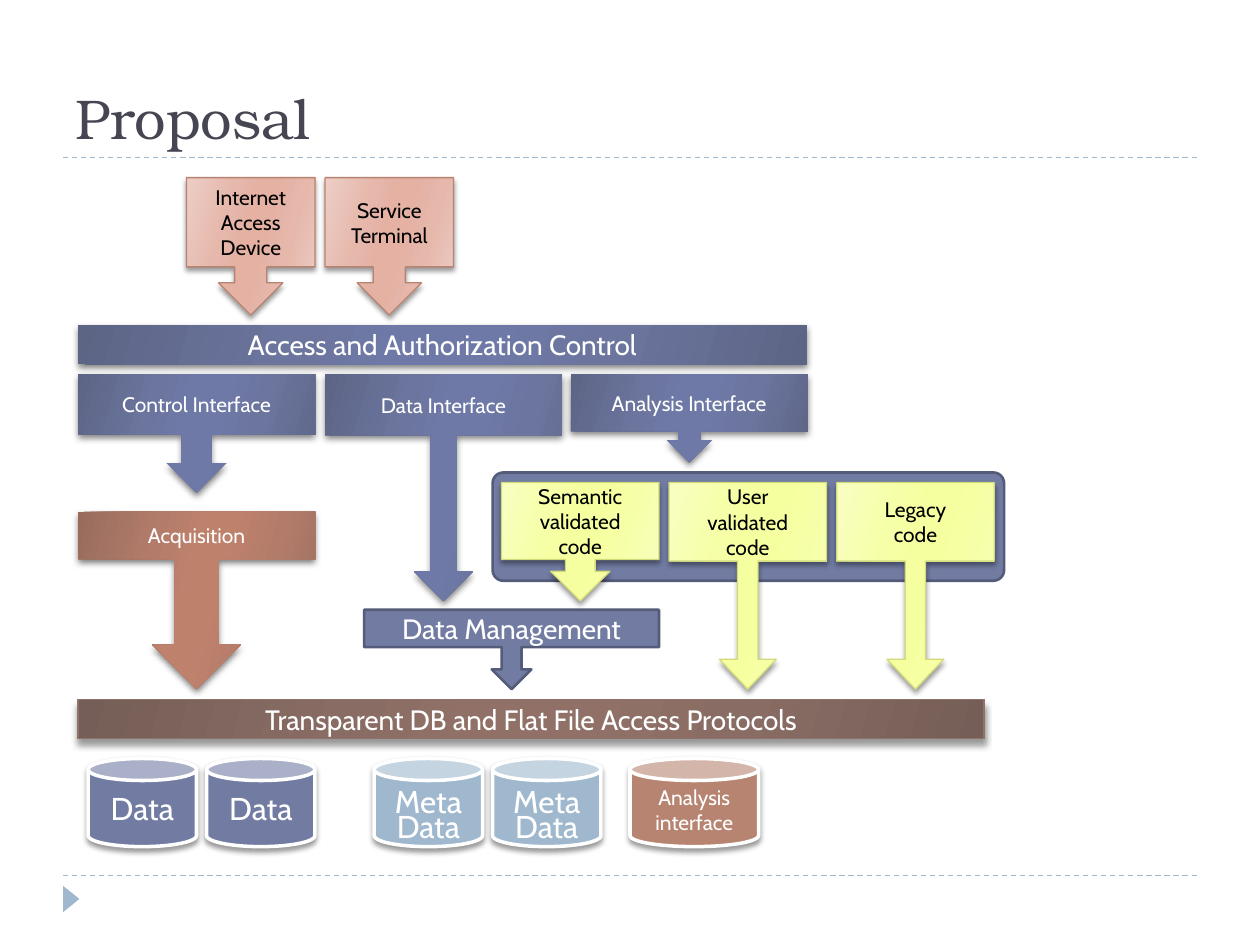
from copy import deepcopy

from lxml.etree import SubElement
from pptx import Presentation
from pptx.dml.color import RGBColor
from pptx.enum.dml import MSO_LINE
from pptx.enum.shapes import MSO_CONNECTOR, MSO_SHAPE
from pptx.enum.text import MSO_ANCHOR, PP_ALIGN
from pptx.oxml import parse_xml
from pptx.oxml.ns import nsdecls, qn
from pptx.util import Inches, Pt

BLACK = RGBColor(0x00, 0x00, 0x00)
WHITE = RGBColor(0xFF, 0xFF, 0xFF)
TITLE = RGBColor(0x46, 0x46, 0x53)
SLATE = RGBColor(0x72, 0x7C, 0xA3)
SLATE_EDGE = RGBColor(0x54, 0x5C, 0x79)
SKY = RGBColor(0x9F, 0xB8, 0xCD)
CLAY = RGBColor(0xB8, 0x84, 0x72)
BROWN_EDGE = RGBColor(0x8E, 0x73, 0x6A)
LIME_EDGE = RGBColor(0xD2, 0xDA, 0x7A)

# Gradients run from the edge colour to the centre colour and back
PINK = [RGBColor.from_string(c) for c in ("ECCEC6", "E6B8AC", "E4B1A3")]
BLUE = [RGBColor.from_string(c) for c in ("5D6585", "6B759E", "6E79A7")]
BROWN = [RGBColor.from_string(c) for c in ("745E57", "896D64", "917167")]
LIME = [RGBColor.from_string(c) for c in ("F8FEC2", "F6FFA7", "F6FF9F")]
RUST = [RGBColor.from_string(c) for c in ("976C5D", "B37C6A", "BE816C")]

# Shadows: opacity in percent, blur and distance in points
SOFT = (40, 3, 2)
STRONG = (50, 4, 2)
DEEP = (40, 4, 3.4)

CALLOUT = MSO_SHAPE.DOWN_ARROW_CALLOUT
PLAIN_CALLOUT = (0.25, 0.25, 0.25, 0.65)

deck = Presentation()
deck.slide_width, deck.slide_height = Inches(10), Inches(7.5)
page = deck.slides.add_slide(deck.slide_layouts[5])


def add_block(kind, place, fill, edge=None, shadow=None, adjust=()):
    """Add a shape with a plain or gradient fill; edge is (colour, points)."""
    shape = page.shapes.add_shape(kind, *[Inches(length) for length in place])
    for index, value in enumerate(adjust):
        shape.adjustments[index] = value
    if isinstance(fill, list):
        outer, middle, inner = fill
        shape.fill.gradient()
        shape.fill.gradient_angle = 0
        gradient = shape.element.spPr.find(qn("a:gradFill"))
        gradient.find(qn("a:lin")).set("ang", str(16 * 60000))
        stops = gradient.find(qn("a:gsLst"))
        for stop in list(stops):
            stops.remove(stop)
        for position, colour in zip((0, 30, 45, 55, 73, 100),
                                    (outer, middle, inner, inner, middle, outer)):
            stop = SubElement(stops, qn("a:gs"), pos=str(position * 1000))
            SubElement(stop, qn("a:srgbClr"), val=str(colour))
    else:
        shape.fill.solid()
        shape.fill.fore_color.rgb = fill
    if edge:
        shape.line.color.rgb, shape.line.width = edge[0], Pt(edge[1])
    else:
        shape.line.fill.background()
    shape.shadow.inherit = False
    if shadow:
        opacity, blur, distance = shadow
        shape.element.spPr.find(qn("a:effectLst")).append(parse_xml(
            f'<a:outerShdw {nsdecls("a")} blurRad="{Pt(blur)}" dist="{Pt(distance)}" '
            f'dir="5400000" rotWithShape="0"><a:srgbClr val="000000">'
            f'<a:alpha val="{opacity * 1000}"/></a:srgbClr></a:outerShdw>'))
    return shape


def add_label(shape, text, size, colour=WHITE, top=0.05, spacing=None):
    """Write centred text; a line feed becomes a line break."""
    frame = shape.text_frame
    frame.word_wrap = True
    frame.vertical_anchor = MSO_ANCHOR.MIDDLE
    frame.margin_top = Inches(top)
    para = frame.paragraphs[0]
    para.text = text
    para.alignment = PP_ALIGN.CENTER
    if spacing:
        para.line_spacing = Pt(spacing)
    for span in para.runs:
        span.font.size, span.font.name = Pt(size), "Cabin"
        span.font.color.rgb = colour
    # Line breaks take the size of the text around them
    for line_break in para._p.findall(qn("a:br")):
        line_break.append(deepcopy(para.runs[0].font._rPr))


# Dashed rules and corner marker
for y in (6.95, 1.25):
    rule = page.shapes.add_connector(
        MSO_CONNECTOR.STRAIGHT, Inches(0.5), Inches(y), Inches(9.5), Inches(y))
    rule.line.color.rgb, rule.line.width = SKY, Pt(0.75)
    rule.line.dash_style = MSO_LINE.DASH
    SubElement(rule.element.spPr, qn("a:effectLst"))
marker = add_block(MSO_SHAPE.ISOSCELES_TRIANGLE, (0.46, 7.07, 0.21, 0.13), SKY)
marker.rotation = 90

# Title
title = page.shapes.title
title.left, title.top = Inches(0.5), Inches(0.17)
title.width, title.height = Inches(9), Inches(1.08)
title.text_frame.text = "Proposal"
title.text_frame.vertical_anchor = MSO_ANCHOR.BOTTOM
para = title.text_frame.paragraphs[0]
para.alignment = PP_ALIGN.LEFT
span = para.runs[0]
span.font.size, span.font.name = Pt(32), "TeX Gyre Bonum"
span.font.color.rgb = TITLE

# Access devices
for left, text in ((1.48, "Internet\nAccess\nDevice"), (2.58, "Service\nTerminal")):
    device = add_block(CALLOUT, (left, 1.41, 1.02, 1.09), PINK, (CLAY, 0.75),
                       SOFT, PLAIN_CALLOUT)
    add_label(device, text, 12, BLACK)

# Full-width layers
for top, width, fill, edge, shadow, text in (
    (2.58, 5.78, BLUE, None, STRONG, "Access and Authorization Control"),
    (5.55, 7.19, BROWN, (BROWN_EDGE, 0.75), DEEP,
     "Transparent DB and Flat File Access Protocols"),
):
    layer = add_block(MSO_SHAPE.ROUNDED_RECTANGLE, (0.62, top, width, 0.31),
                      fill, edge, shadow, (0,))
    add_label(layer, text, 16)

# Interfaces and acquisition
for left, top, height, fill, adjust, text in (
    (0.62, 2.97, 0.94, BLUE, (0.25, 0.25, 0.25, 0.51), "Control Interface"),
    (2.58, 2.97, 1.8, BLUE, (0.115, 0.13, 0.13, 0.27), "Data Interface"),
    (4.53, 2.97, 0.7, BLUE, PLAIN_CALLOUT, "Analysis Interface"),
    (0.62, 4.06, 1.41, RUST, (0.25, 0.25, 0.25, 0.27), "Acquisition"),
):
    interface = add_block(CALLOUT, (left, top, 1.88, height), fill, None,
                          STRONG, adjust)
    add_label(interface, text, 12)

# Data stores
for left, width, fill, text, size, top, spacing in (
    (0.7, 0.86, SLATE, "Data", 18, 0.05, None),
    (1.64, 0.86, SLATE, "Data", 18, 0.05, None),
    (2.97, 0.86, SKY, "Meta\nData", 18, 0.24, 14),
    (3.91, 0.86, SKY, "Meta\nData", 18, 0.24, 14),
    (5, 1.02, CLAY, "Analysis\ninterface", 12, 0.08, 14),
):
    store = add_block(MSO_SHAPE.CAN, (left, 6.02, width, 0.7), fill, (WHITE, 2), SOFT)
    add_label(store, text, size, top=top, spacing=spacing)

# Code frame and data management
add_block(MSO_SHAPE.ROUNDED_RECTANGLE, (3.91, 3.75, 4.06, 0.86), SLATE,
          (SLATE_EDGE, 1.5), adjust=(0.1,))
management = add_block(CALLOUT, (2.89, 4.84, 2.34, 0.63), SLATE, (SLATE_EDGE, 1.5),
                       adjust=(0.25, 0.25, 0.25, 0.47))
add_label(management, "Data Management", 16)

# Kinds of code
LONG_CALLOUT = (0.13, 0.18, 0.19, 0.38)
for column, (text, height, adjust) in enumerate((
    ("Semantic\nvalidated\ncode", 0.94, PLAIN_CALLOUT),
    ("User\nvalidated\ncode", 1.64, LONG_CALLOUT),
    ("Legacy\ncode", 1.64, LONG_CALLOUT),
)):
    code = add_block(CALLOUT, (3.98 + 1.33 * column, 3.83, 1.25, height), LIME,
                     (LIME_EDGE, 0.75), SOFT, adjust)
    add_label(code, text, 12, BLACK)

deck.save("out.pptx")
